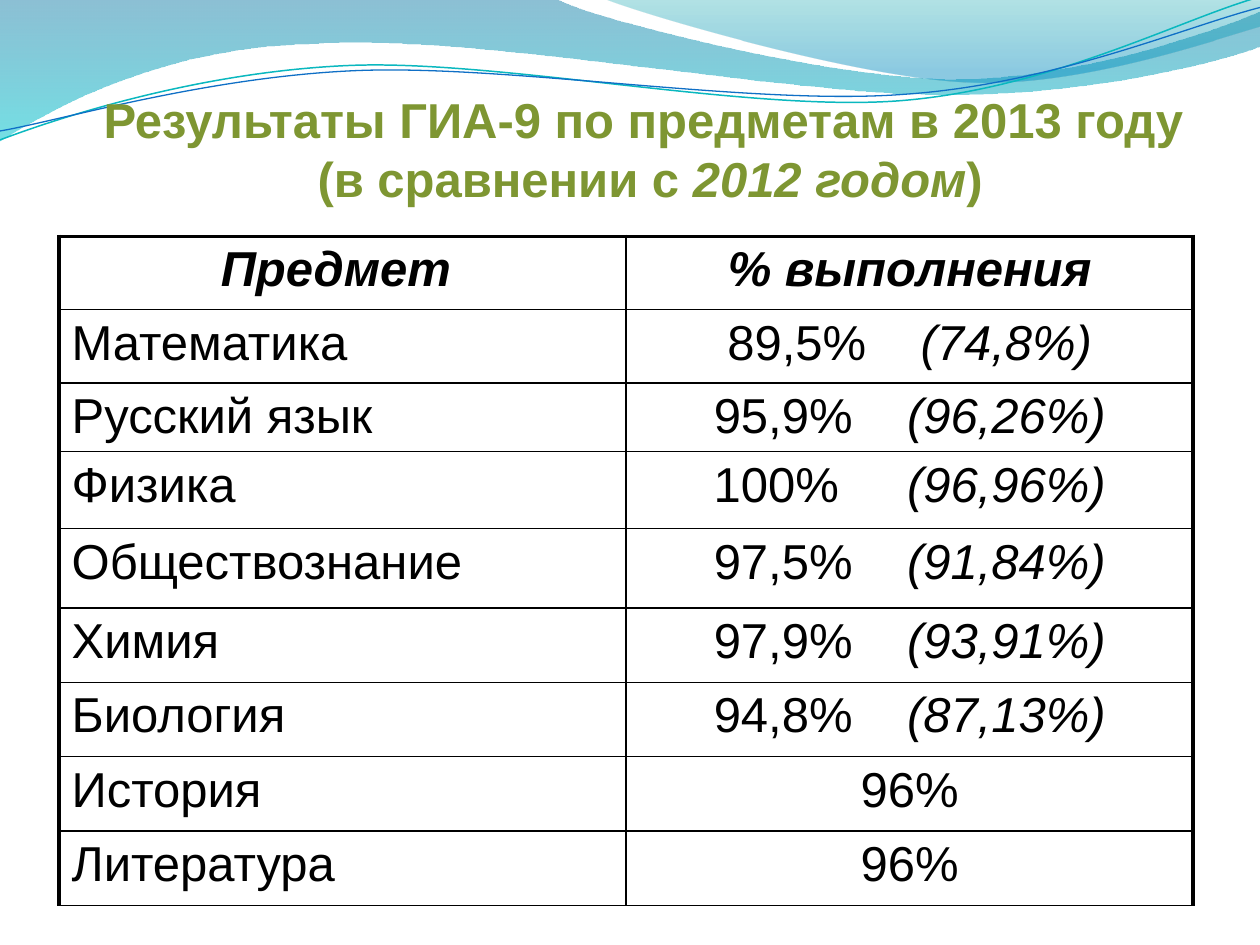
from lxml import etree
from pptx import Presentation
from pptx.dml.color import RGBColor
from pptx.enum.text import MSO_ANCHOR, PP_ALIGN
from pptx.oxml.ns import qn
from pptx.util import Pt

CENTER, LEFT = PP_ALIGN.CENTER, PP_ALIGN.LEFT
BOTTOM = MSO_ANCHOR.BOTTOM
BLACK = RGBColor(0x00, 0x00, 0x00)
OLIVE = RGBColor(0x7E, 0x96, 0x32)
DEEP_BLUE = RGBColor(0x00, 0x74, 0xA1)
CYAN = RGBColor(0x00, 0xC6, 0xCF)
TEAL = RGBColor(0x00, 0xA1, 0xA9)
SKY = RGBColor(0x00, 0x8B, 0xBF)
TEAL_LINE = RGBColor(0x0A, 0xB8, 0xBF)
BLUE_LINE = RGBColor(0x0F, 0x6F, 0xC6)
FONT, SIZE = "Arial", 28
SPACE_WIDTH = 0.278 * SIZE

TITLE_LINES = [
    [("Результаты ГИА-9 по предметам в 2013 году ", False)],
    [("(в сравнении с ", False), ("2012 годом", True), (")", False)],
]
HEADERS = ["Предмет ", "% выполнения"]
RESULTS = [
    ("Математика", "89,5%", "(74,8%)"),
    ("Русский язык", "95,9%", "(96,26%)"),
    ("Физика", "100%", "(96,96%)"),
    ("Обществознание", "97,5%", "(91,84%)"),
    ("Химия", "97,9%", "(93,91%)"),
    ("Биология", "94,8%", "(87,13%)"),
    ("История", "96%", None),
    ("Литература", "96%", None),
]
COLUMN_WIDTH = 324
ROW_HEIGHTS = [42, 42, 39, 44, 45.5, 42.5, 42.5, 42.5, 42.5]
THICK, THIN = 2.25, 1

# Each path: a start point, then segments of one point (line) or three (curve).
WAVES = [
    ([(0, 0), [(317, -1)],
      [(343, 12), (478, 45), (546, 45)], [(614, 45), (690, 19), (720, 6.5)],
      [(721, 26)],
      [(708, 32), (626, 55), (537, 54)], [(448, 54), (275, 20), (185, 24.5)],
      [(93, 26), (33, 60), (-1, 81)]],
     [(0, DEEP_BLUE, 45), (1, CYAN, 55)]),
    ([(345, -1),
      [(366.5, 8), (491, 44.6), (553.7, 46.8)], [(616, 49.7), (692, 23), (720, 15)],
      [(720, 0)]],
     [(0, TEAL, 30), (0.8, SKY, 45)]),
]
STRAND_ROTATION = 357.3
STRANDS = [
    ([(-1.4, 63), [(33.7, 51.6), (114, 29.5), (199.8, 29.9)],
      [(284.8, 30.3), (425.8, 67.2), (512.4, 64.9)],
      [(599, 62.4), (676.4, 25.7), (720.2, 15.6)]], TEAL_LINE, 0.85),
    ([(-1.2, 57.9), [(33, 53.7), (118.3, 32.5), (204, 33)],
      [(290.5, 33.5), (428.9, 63.8), (515.5, 61.3)],
      [(601.3, 59.6), (678.5, 30.1), (721.4, 21.3)]], BLUE_LINE, 0.75),
]


def add_outline(slide, outline, close):
    (start_x, start_y), *segments = outline
    points = [(Pt(x), Pt(y)) for segment in segments for x, y in segment]
    builder = slide.shapes.build_freeform(Pt(start_x), Pt(start_y))
    builder.add_line_segments(points, close=close)
    shape = builder.convert_to_shape()
    shape.shadow.inherit = False
    steps = iter(list(shape.element.spPr.iter(qn("a:lnTo"))))
    for segment in segments:
        first, *others = [next(steps) for _ in segment]
        if others:
            curve = etree.Element(qn("a:cubicBezTo"))
            first.addprevious(curve)
            for step in (first, *others):
                curve.append(step[0])
                step.getparent().remove(step)
    return shape


def add_wave(slide, outline, stops):
    shape = add_outline(slide, outline, True)
    shape.line.fill.background()
    shape.fill.gradient()
    shape.fill.gradient_angle = 270
    for stop, (position, color, _) in zip(shape.fill.gradient_stops, stops):
        stop.position = position
        stop.color.rgb = color
    colors = shape.element.spPr.iter(qn("a:srgbClr"))
    for color_element, (_, _, opacity) in zip(colors, stops):
        etree.SubElement(color_element, qn("a:alpha"), val=str(opacity * 1000))


def add_strand(slide, outline, color, width):
    shape = add_outline(slide, outline, False)
    shape.rotation = STRAND_ROTATION
    shape.fill.background()
    shape.line.color.rgb = color
    shape.line.width = Pt(width)


def add_run(paragraph, text, color=BLACK, bold=False, italic=False):
    run = paragraph.add_run()
    run.text = text
    font = run.font
    font.name, font.size, font.bold, font.italic = FONT, Pt(SIZE), bold, italic
    font.color.rgb = color
    return run


def add_title(slide):
    box = slide.shapes.add_textbox(Pt(36.7), Pt(50.7), Pt(669.6), Pt(67.7))
    frame = box.text_frame
    frame.word_wrap = True
    frame.vertical_anchor = BOTTOM
    frame.margin_left = frame.margin_right = frame.margin_bottom = 0
    paragraph = frame.paragraphs[0]
    paragraph.alignment = CENTER
    for index, line in enumerate(TITLE_LINES):
        if index:
            paragraph.add_line_break()
        for text, italic in line:
            add_run(paragraph, text, OLIVE, True, italic)


def set_borders(cell, widths):
    properties = cell._tc.get_or_add_tcPr()
    for index, (side, width) in enumerate(widths.items()):
        line = etree.Element(qn(f"a:ln{side}"), w=str(Pt(width)))
        fill = etree.SubElement(line, qn("a:solidFill"))
        etree.SubElement(fill, qn("a:srgbClr"), val=str(BLACK))
        properties.insert(index, line)


def fill_score(paragraph, score, previous):
    add_run(paragraph, score)
    if previous:
        spaces = 4 if "," in score else 5
        gap = add_run(paragraph, " ")
        gap.font._element.set("spc", str(round((spaces - 1) * SPACE_WIDTH * 100)))
        add_run(paragraph, previous, italic=True)


def add_results_table(slide):
    table = slide.shapes.add_table(
        len(ROW_HEIGHTS), 2, Pt(33.8), Pt(135),
        Pt(2 * COLUMN_WIDTH), Pt(sum(ROW_HEIGHTS))).table
    table.first_row = table.horz_banding = False
    for column in table.columns:
        column.width = Pt(COLUMN_WIDTH)
    for row_index, height in enumerate(ROW_HEIGHTS):
        table.rows[row_index].height = Pt(height)
        for column_index in (0, 1):
            cell = table.cell(row_index, column_index)
            cell.margin_bottom = 0
            cell.fill.background()
            set_borders(cell, {
                "L": THIN if column_index else THICK,
                "R": THICK if column_index else THIN,
                "T": THIN if row_index else THICK,
                "B": THIN,
            })
            paragraph = cell.text_frame.paragraphs[0]
            paragraph.alignment = CENTER if column_index or not row_index else LEFT
            if not row_index:
                add_run(paragraph, HEADERS[column_index], bold=True, italic=True)
                continue
            subject, score, previous = RESULTS[row_index - 1]
            if column_index:
                fill_score(paragraph, score, previous)
            else:
                add_run(paragraph, subject)


def main():
    presentation = Presentation()
    presentation.slide_width, presentation.slide_height = Pt(720), Pt(540)
    slide = presentation.slides.add_slide(presentation.slide_layouts[6])
    for wave in WAVES:
        add_wave(slide, *wave)
    for strand in STRANDS:
        add_strand(slide, *strand)
    add_title(slide)
    add_results_table(slide)
    presentation.save("out.pptx")


if __name__ == "__main__":
    main()
